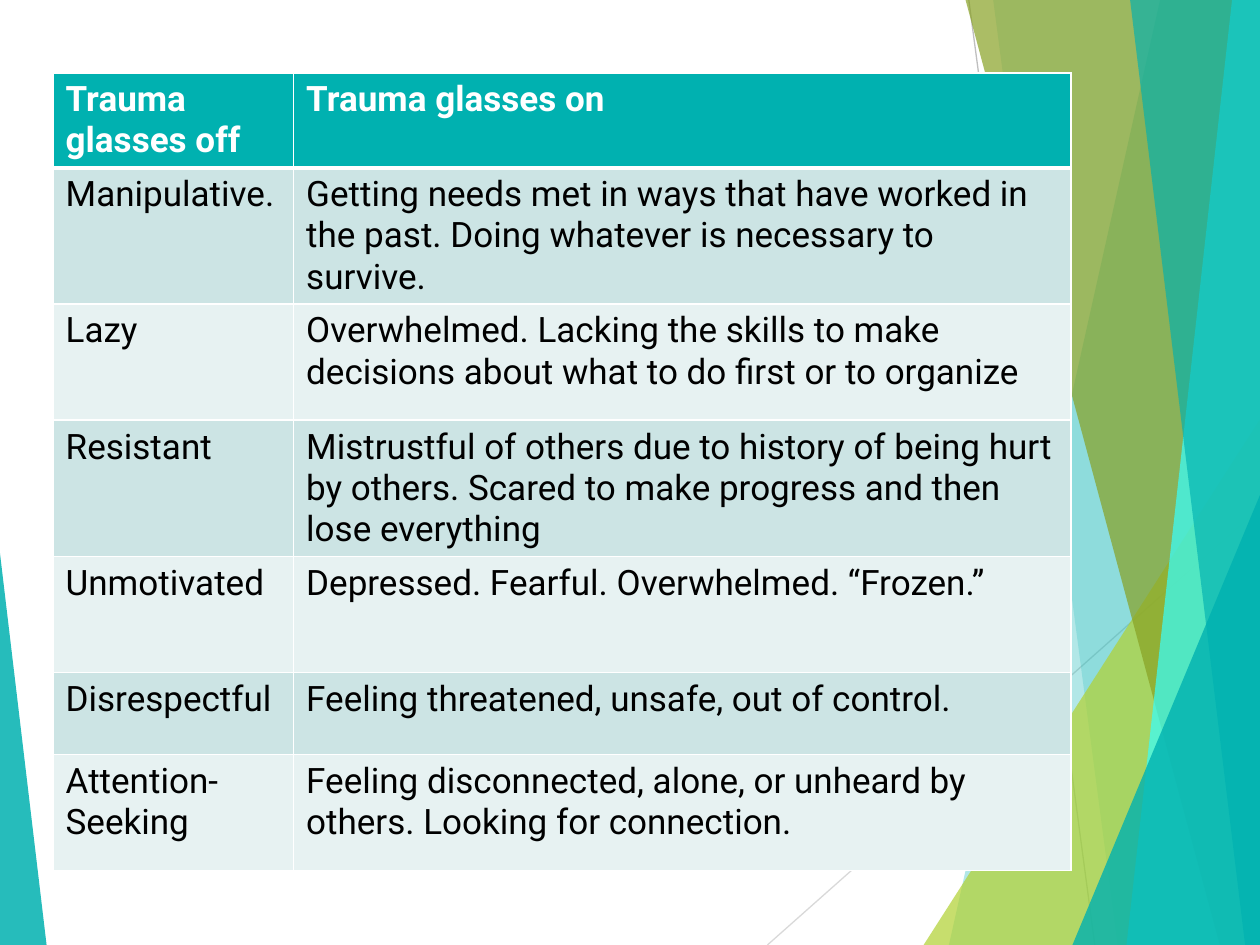
from dataclasses import dataclass

from lxml import etree
from pptx import Presentation
from pptx.dml.color import RGBColor
from pptx.enum.shapes import MSO_CONNECTOR, MSO_SHAPE
from pptx.oxml.ns import qn
from pptx.util import Cm, Pt

STRAIGHT = MSO_CONNECTOR.STRAIGHT
TRIANGLE = MSO_SHAPE.ISOSCELES_TRIANGLE

WIDTH, HEIGHT = 25.4, 19.05
BLADE_TOP = -0.02
TEAL, LIME, OLIVE, AQUA = "00B1B0", "B2D235", "88A124", "37FFFE"
WHITE, BLACK = "FFFFFF", "000000"
BANDS = ("CCE4E4", "E7F2F2")
FONT = "Roboto"


@dataclass
class Line:
    start: tuple[float, float]
    end: tuple[float, float]
    color: str


@dataclass
class Blade:
    top_x: float
    bottom_x: float
    color: str
    opacity: int


@dataclass
class Wedge:
    left: float
    top: float
    width: float
    peak: float
    color: str
    opacity: int


DECORATION = (
    Line((19.53, 0), (22.07, HEIGHT), "BFBFBF"),
    Line((WIDTH, 10.24), (15.47, HEIGHT), "D9D9D9"),
    Blade(23.39, 19.13, TEAL, 30),
    Blade(20.02, 22.53, TEAL, 20),
    Wedge(18.62, 8.46, 6.78, 1, LIME, 72),
    Blade(19.46, 24.59, OLIVE, 70),
    Blade(24.84, 22.71, AQUA, 70),
    Blade(22.78, 25.1, TEAL, 65),
    Wedge(21.62, 9.98, 3.78, 1, TEAL, 80),
    Wedge(0, 11.15, 0.94, 0, TEAL, 85),
)

COLUMN_WIDTHS = (4.85, 15.67)
ROW_HEIGHTS = (1.65, 2.34, 2.34, 2.34, 2.34, 1.65, 2.34)
ROWS = (
    ("Trauma glasses off", "Trauma glasses on"),
    ("Manipulative.", "Getting needs met in ways that have worked in the past. "
     "Doing whatever is necessary to survive."),
    ("Lazy", "Overwhelmed. Lacking the skills to make decisions about what to do "
     "first or to organize"),
    ("Resistant", "Mistrustful of others due to history of being hurt by others. "
     "Scared to make progress and then lose everything"),
    ("Unmotivated", "Depressed. Fearful. Overwhelmed. “Frozen.”"),
    ("Disrespectful", "Feeling threatened, unsafe, out of control."),
    ("Attention-Seeking", "Feeling disconnected, alone, or unheard by others. "
     "Looking for connection."),
)


def rgb(color: str) -> RGBColor:
    return RGBColor.from_string(color)


def paint(shape, color: str, opacity: int) -> None:
    shape.shadow.inherit = False
    shape.line.fill.background()
    shape.fill.solid()
    shape.fill.fore_color.rgb = rgb(color)
    tint = shape._element.spPr.find(qn("a:solidFill"))[0]
    etree.SubElement(tint, qn("a:alpha"), val=str(opacity * 1000))


def draw_line(page, line: Line) -> None:
    points = [Cm(value) for value in line.start + line.end]
    connector = page.shapes.add_connector(STRAIGHT, *points)
    connector.line.color.rgb = rgb(line.color)
    connector.line.width = Pt(0.75)
    etree.SubElement(connector._element.spPr, qn("a:effectLst"))


def draw_blade(page, blade: Blade) -> None:
    corners = ((WIDTH, BLADE_TOP), (WIDTH, HEIGHT), (blade.bottom_x, HEIGHT))
    builder = page.shapes.build_freeform(Cm(blade.top_x), Cm(BLADE_TOP))
    builder.add_line_segments([(Cm(x), Cm(y)) for x, y in corners], close=True)
    paint(builder.convert_to_shape(), blade.color, blade.opacity)


def draw_wedge(page, wedge: Wedge) -> None:
    shape = page.shapes.add_shape(
        TRIANGLE, Cm(wedge.left), Cm(wedge.top), Cm(wedge.width), Cm(HEIGHT - wedge.top)
    )
    shape.adjustments[0] = wedge.peak
    paint(shape, wedge.color, wedge.opacity)


def write(cell, text: str, *, color: str, bold: bool, size: int = 20) -> None:
    span = cell.text_frame.paragraphs[0].add_run()
    span.text = text
    span.font.name = FONT
    span.font.size = Pt(size)
    span.font.bold = bold
    span.font.color.rgb = rgb(color)


def add_borders(cell, top: int, bottom: int) -> None:
    properties = cell._tc.get_or_add_tcPr()
    for side, points in (("L", 1), ("R", 1), ("T", top), ("B", bottom)):
        edge = etree.SubElement(properties, qn(f"a:ln{side}"), w=str(Pt(points)))
        fill = etree.SubElement(edge, qn("a:solidFill"))
        etree.SubElement(fill, qn("a:srgbClr"), val=WHITE)


def draw_table(page) -> None:
    frame = page.shapes.add_table(
        len(ROWS), len(COLUMN_WIDTHS), Cm(1.07), Cm(1.47),
        Cm(sum(COLUMN_WIDTHS)), Cm(sum(ROW_HEIGHTS)),
    )
    table = frame.table
    table.horz_banding = False
    for column, width in zip(table.columns, COLUMN_WIDTHS):
        column.width = Cm(width)
    for index, (row, height, texts) in enumerate(zip(table.rows, ROW_HEIGHTS, ROWS)):
        row.height = Cm(height)
        header = index == 0
        for cell, text in zip(row.cells, texts):
            add_borders(cell, top=3 if index == 1 else 1, bottom=3 if header else 1)
            cell.fill.solid()
            cell.fill.fore_color.rgb = rgb(TEAL if header else BANDS[(index - 1) % 2])
            write(cell, text, color=WHITE if header else BLACK, bold=header)


def main() -> None:
    deck = Presentation()
    deck.slide_width, deck.slide_height = Cm(WIDTH), Cm(HEIGHT)
    page = deck.slides.add_slide(deck.slide_layouts[6])
    painters = {Line: draw_line, Blade: draw_blade, Wedge: draw_wedge}
    for item in DECORATION:
        painters[type(item)](page, item)
    draw_table(page)
    deck.save("out.pptx")


if __name__ == "__main__":
    main()
